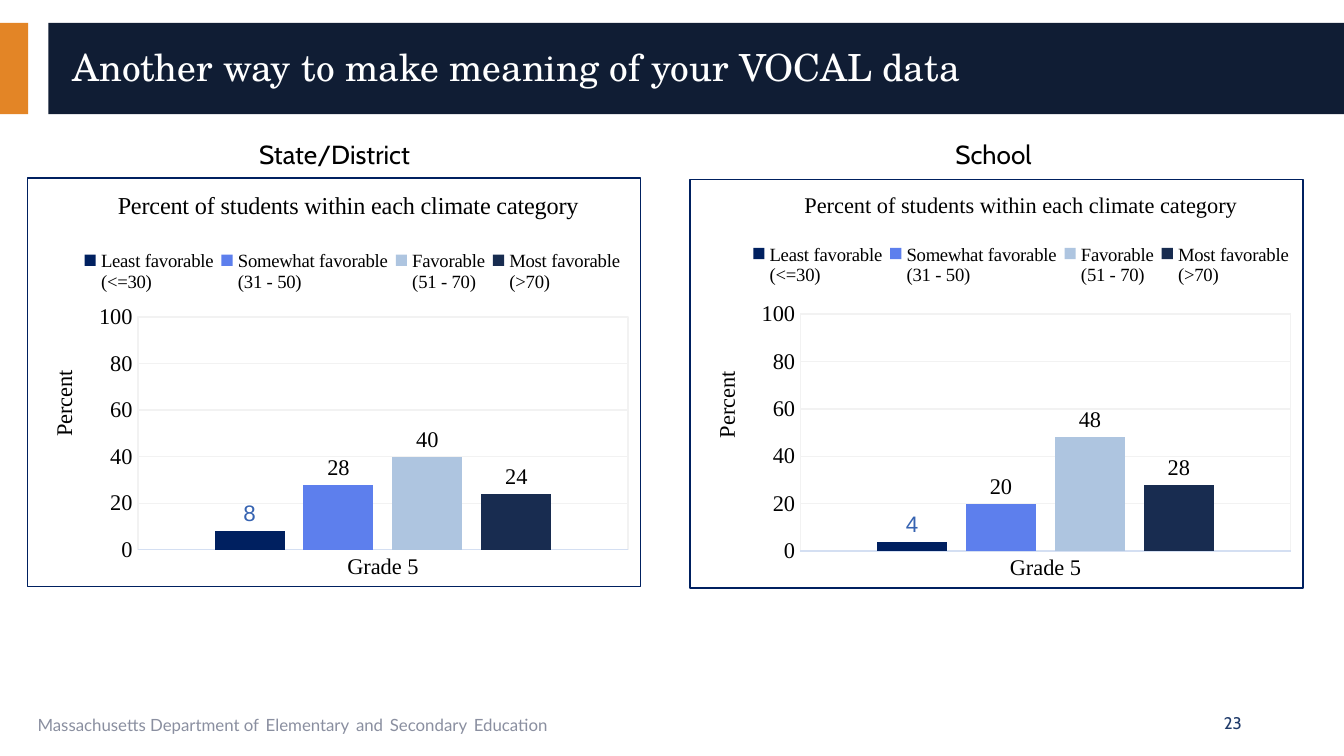
from lxml.etree import SubElement
from pptx import Presentation
from pptx.chart.data import CategoryChartData
from pptx.dml.color import RGBColor
from pptx.enum.chart import XL_CHART_TYPE, XL_LABEL_POSITION, XL_LEGEND_POSITION, XL_TICK_MARK
from pptx.enum.shapes import MSO_SHAPE
from pptx.enum.text import MSO_ANCHOR, PP_ALIGN
from pptx.oxml import parse_xml
from pptx.oxml.ns import nsdecls, qn
from pptx.util import Inches, Pt

COLORS = {
    "orange": "E38526", "banner": "101D34", "white": "FFFFFF", "black": "000000",
    "footer": "8A8FA0", "text": "203B6A", "axis": "D4DFF2", "grid": "F2F2F2",
    "border": "002060", "label": "3663B1",
}
SERIF = "Times New Roman"
SERIES = [
    # name, fill, label color, label font
    ("Least favorable\n(<=30)", "002060", "label", "Arial"),
    ("Somewhat favorable\n(31 - 50)", "5D7FED", "black", SERIF),
    ("Favorable\n(51 - 70)", "AEC5E0", "black", SERIF),
    ("Most favorable\n(>70)", "182C50", "black", SERIF),
]


def set_font(font, size, name, color):
    font.size = Pt(size)
    font.name = name
    font.bold = False
    font.color.rgb = RGBColor.from_string(COLORS[color])


def set_layout(element, previous, inner=False, **fractions):
    """Place a chart part by fractions of the chart, after its child `previous`."""
    for old in element.findall(qn("c:layout")):
        element.remove(old)
    layout = parse_xml(f"<c:layout {nsdecls('c')}><c:manualLayout/></c:layout>")
    if inner:
        SubElement(layout[0], qn("c:layoutTarget"), val="inner")
    for mode in ("xMode", "yMode"):
        SubElement(layout[0], qn(f"c:{mode}"), val="edge")
    for key, value in fractions.items():
        SubElement(layout[0], qn(f"c:{key}"), val=str(value))
    if previous:
        element.find(qn(previous)).addnext(layout)
    else:
        element.insert(0, layout)


presentation = Presentation()
presentation.slide_width = Inches(10)
presentation.slide_height = Inches(10 * 9 / 16)
slide = presentation.slides.add_slide(presentation.slide_layouts[6])

# Banner
for left, width, color in [(0, 0.21, "orange"), (0.36, 9.64, "banner")]:
    shape = slide.shapes.add_shape(
        MSO_SHAPE.RECTANGLE, Inches(left), Inches(0.17), Inches(width), Inches(0.68))
    shape.shadow.inherit = False
    shape.fill.solid()
    shape.fill.fore_color.rgb = RGBColor.from_string(COLORS[color])
    shape.line.fill.background()

# Title, chart headings and slide number
MIDDLE, TOP = MSO_ANCHOR.MIDDLE, MSO_ANCHOR.TOP
LEFT, RIGHT = PP_ALIGN.LEFT, PP_ALIGN.RIGHT
for text, box, inset, wrap, anchor, align, spacing, size, font, color in [
    ("Another way to make meaning of your VOCAL data", (0.47, 0.24, 9.33, 0.56),
     (0.07, 0.04), True, MIDDLE, LEFT, 0.9, 20, "TeX Gyre Schola", "white"),
    ("State/District", (1.83, 0.98, 1.33, 0.34),
     (0.1, 0.05), False, TOP, LEFT, 1.0, 14, "Cabin", "black"),
    ("School", (7.01, 0.98, 0.8, 0.34),
     (0.1, 0.05), False, TOP, LEFT, 1.0, 14, "Cabin", "black"),
    ("23", (8.98, 5.21, 0.33, 0.34),
     (0.07, 0.04), True, MIDDLE, RIGHT, 1.0, 9, "Cabin", "text"),
]:
    frame = slide.shapes.add_textbox(*map(Inches, box)).text_frame
    frame.word_wrap = wrap
    frame.vertical_anchor = anchor
    frame.margin_left = frame.margin_right = Inches(inset[0])
    frame.margin_top = frame.margin_bottom = Inches(inset[1])
    paragraph = frame.paragraphs[0]
    paragraph.text = text
    paragraph.alignment = align
    paragraph.line_spacing = spacing
    set_font(paragraph.font, size, font, color)

# Footer, with wider spaces between the last words
frame = slide.shapes.add_textbox(Inches(0.21), Inches(5.21), Inches(6.33), Inches(0.3)).text_frame
frame.word_wrap = True
frame.margin_left = frame.margin_right = Inches(0.07)
frame.margin_top = frame.margin_bottom = Inches(0.04)
phrases = ["Massachusetts Department of", "Elementary", "and", "Secondary", "Education"]
for index, phrase in enumerate(phrases):
    if index:
        run = frame.paragraphs[0].add_run()
        run.text = " "
        set_font(run.font, 14, "Lato", "text")
    run = frame.paragraphs[0].add_run()
    run.text = phrase
    set_font(run.font, 9, "Lato", "footer")

# Charts
for left, top, values, title_size, title_x, legend_x, legend_y, plot_y, plot_height in [
    (0.2, 1.32, (8, 28, 40, 24), 13, 0.14, 0.08, 0.17, 0.34, 0.57),
    (5.13, 1.33, (4, 20, 48, 28), 12, 0.18, 0.09, 0.15, 0.33, 0.58),
]:
    data = CategoryChartData()
    data.categories = ["Grade 5"]
    for (name, *_), value in zip(SERIES, values):
        data.add_series(name, [value])
    chart = slide.shapes.add_chart(
        XL_CHART_TYPE.COLUMN_CLUSTERED, Inches(left), Inches(top),
        Inches(4.57), Inches(3.05), data).chart
    set_font(chart.font, 10, "Arial", "text")

    chart.has_title = True
    title = chart.chart_title
    title.text_frame.text = "Percent of students within each climate category"
    set_font(title.text_frame.paragraphs[0].font, title_size, SERIF, "black")
    set_layout(title._element, "c:tx", x=title_x, y=0.02)

    chart.has_legend = True
    legend = chart.legend
    legend.position = XL_LEGEND_POSITION.TOP
    legend.include_in_layout = False
    set_font(legend.font, 10, SERIF, "black")
    set_layout(legend._element, "c:legendPos", x=legend_x, y=legend_y, w=0.9, h=0.12)

    category_axis, value_axis = chart.category_axis, chart.value_axis
    for axis in (category_axis, value_axis):
        axis.major_tick_mark = axis.minor_tick_mark = XL_TICK_MARK.NONE
        set_font(axis.tick_labels.font, 12, SERIF, "black")
    category_axis.format.line.color.rgb = RGBColor.from_string(COLORS["axis"])
    category_axis.format.line.width = Pt(0.75)
    value_axis.minimum_scale, value_axis.maximum_scale = 0, 100
    value_axis.major_unit = 20
    value_axis.format.line.fill.background()
    gridline = value_axis.major_gridlines.format.line
    gridline.color.rgb = RGBColor.from_string(COLORS["grid"])
    gridline.width = Pt(0.75)
    axis_title = value_axis.axis_title
    axis_title.text_frame.text = "Percent"
    set_font(axis_title.text_frame.paragraphs[0].font, 12, SERIF, "black")
    axis_title._element.find(f".//{qn('a:bodyPr')}").set("rot", "-5400000")
    set_layout(axis_title._element, "c:tx", x=0.03, y=0.46)

    plot = chart.plots[0]
    plot.vary_by_categories = False
    plot.gap_width = 219
    plot.overlap = -27
    for series, (_, fill, label_color, label_font) in zip(plot.series, SERIES):
        series.format.fill.solid()
        series.format.fill.fore_color.rgb = RGBColor.from_string(fill)
        labels = series.data_labels
        labels.show_value = True
        labels.position = XL_LABEL_POSITION.OUTSIDE_END
        set_font(labels.font, 12, label_font, label_color)

    # Frames around the plot and the whole chart
    chart_element = chart.element.find(qn("c:chart"))
    plot_area = chart_element.find(qn("c:plotArea"))
    set_layout(plot_area, None, inner=True, x=0.18, y=plot_y, w=0.8, h=plot_height)
    plot_frame, chart_frame = [
        parse_xml(
            f'<c:spPr {nsdecls("c", "a")}>{fill}<a:ln w="9525"><a:solidFill>'
            f'<a:srgbClr val="{COLORS[line]}"/></a:solidFill></a:ln></c:spPr>')
        for fill, line in [
            ("<a:noFill/>", "grid"),
            (f'<a:solidFill><a:srgbClr val="{COLORS["white"]}"/></a:solidFill>', "border"),
        ]
    ]
    plot_area.append(plot_frame)
    chart_element.addnext(chart_frame)

presentation.save("out.pptx")
